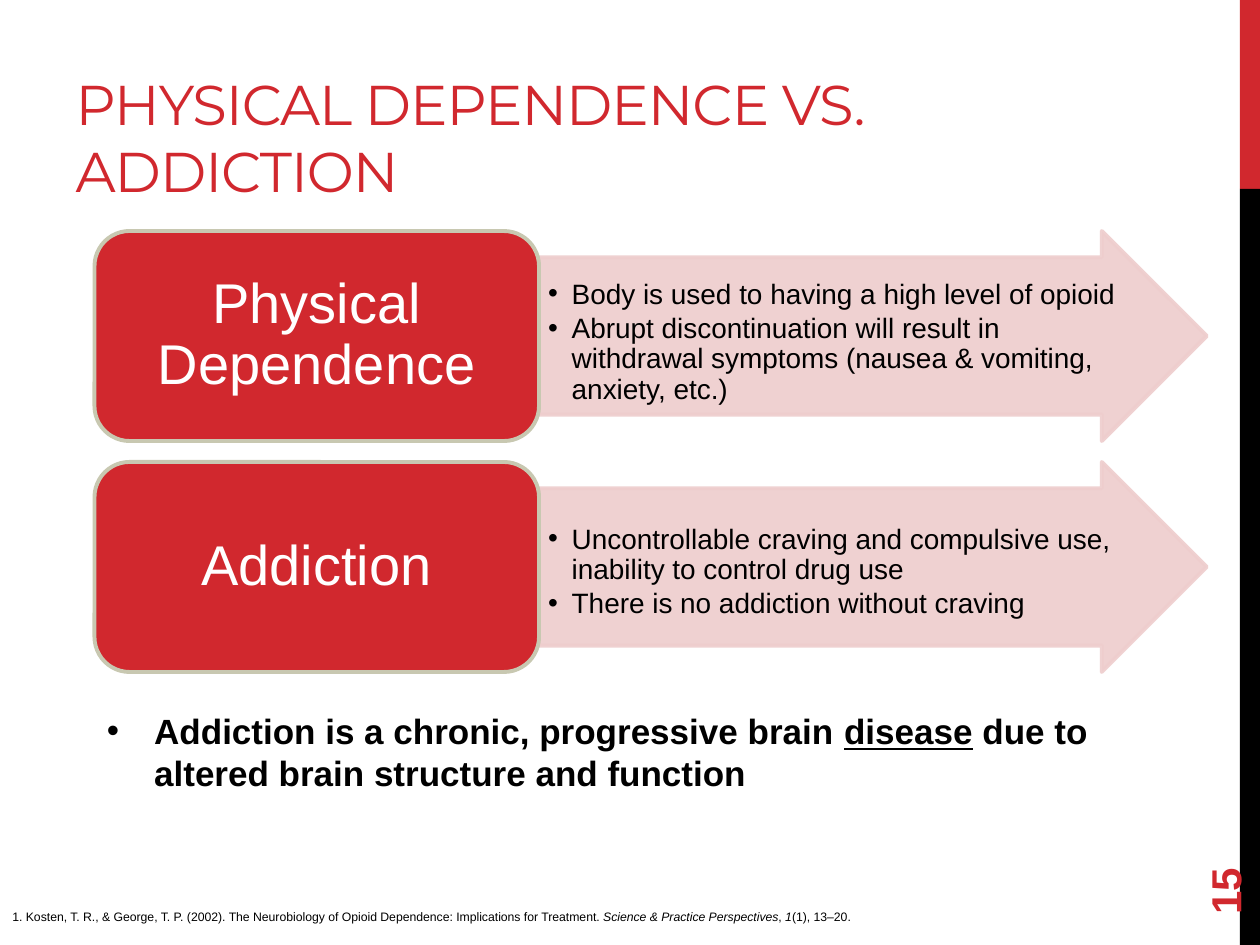
from lxml.etree import SubElement
from pptx import Presentation
from pptx.dml.color import RGBColor
from pptx.enum.shapes import MSO_SHAPE
from pptx.enum.text import MSO_ANCHOR, MSO_AUTO_SIZE, PP_ALIGN
from pptx.oxml.ns import qn
from pptx.util import Pt

COLORS = {
    "red": "D1282E",
    "black": "000000",
    "white": "FFFFFF",
    "pink": "EECDCD",
    "border": "C8C8B1",
}

# Each row: label, space above the bullets, bullets
ROWS = [
    ("Physical Dependence", 13, [
        "Body is used to having a high level of opioid",
        "Abrupt discontinuation will result in withdrawal symptoms "
        "(nausea & vomiting, anxiety, etc.)",
    ]),
    ("Addiction", 21, [
        "Uncontrollable craving and compulsive use, inability to control drug use",
        "There is no addiction without craving",
    ]),
]
ROW_TOP, ROW_PITCH, ROW_HEIGHT = 132, 132, 120
LABEL_LEFT, LABEL_WIDTH, ARROW_WIDTH = 54, 254, 381.6


def color(name):
    return RGBColor.from_string(COLORS[name])


def style_font(font, size, name, bold=False, family="Arial"):
    font.size = Pt(size)
    font.name = family
    font.bold = bold
    font.color.rgb = color(name)


def set_insets(frame, left, top, right, bottom):
    frame.margin_left, frame.margin_top = Pt(left), Pt(top)
    frame.margin_right, frame.margin_bottom = Pt(right), Pt(bottom)


def add_bullet(para, margin, hanging):
    props = para._p.get_or_add_pPr()
    props.set("marL", str(Pt(margin)))
    props.set("indent", str(-Pt(hanging)))
    SubElement(props, qn("a:buFont")).set("typeface", "Arial")
    SubElement(props, qn("a:buChar")).set("char", "•")


def set_opacity(fill, percent):
    choice = fill._xPr.find(qn("a:solidFill"))[0]
    SubElement(choice, qn("a:alpha")).set("val", str(percent * 1000))


def add_block(page, kind, box, fill, line=None):
    shape = page.shapes.add_shape(kind, *map(Pt, box))
    shape.shadow.inherit = False
    shape.fill.solid()
    shape.fill.fore_color.rgb = color(fill)
    if line:
        shape.line.color.rgb = color(line)
        shape.line.width = Pt(2.25)
    else:
        shape.line.fill.background()
    return shape


def add_text(page, box, spans, size, name, bold=False):
    """Add a one-paragraph text box; spans are (text, font attribute or None)."""
    shape = page.shapes.add_textbox(*map(Pt, box))
    shape.text_frame.word_wrap = True
    para = shape.text_frame.paragraphs[0]
    style_font(para.font, size, name, bold)
    for text, emphasis in spans:
        span = para.add_run()
        span.text = text
        style_font(span.font, size, name, bold)
        if emphasis:
            setattr(span.font, emphasis, True)
    return shape


def add_title(page, text):
    title = page.shapes.title
    title.left, title.top, title.width, title.height = map(Pt, (36, 12, 516, 108))
    frame = title.text_frame
    frame.word_wrap = True
    frame.auto_size = MSO_AUTO_SIZE.NONE
    frame.vertical_anchor = MSO_ANCHOR.BOTTOM
    para = frame.paragraphs[0]
    para.alignment = PP_ALIGN.LEFT
    span = para.add_run()
    span.text = text
    style_font(span.font, 32, "red", family="Montserrat")
    span.font._element.set("spc", "-60")


def add_arrow(page, top, space_above, bullets):
    box = (LABEL_LEFT + LABEL_WIDTH, top, ARROW_WIDTH, ROW_HEIGHT)
    arrow = add_block(page, MSO_SHAPE.RIGHT_ARROW, box, "pink", "pink")
    arrow.adjustments[0], arrow.adjustments[1] = 0.75, 0.5
    set_opacity(arrow.fill, 90)
    set_opacity(arrow.line.fill, 90)
    frame = arrow.text_frame
    frame.vertical_anchor = MSO_ANCHOR.TOP
    set_insets(frame, 0.72, space_above, 0.72, 0.72)
    for index, text in enumerate(bullets):
        para = frame.paragraphs[0] if index == 0 else frame.add_paragraph()
        para.text = text
        para.alignment = PP_ALIGN.LEFT
        para.line_spacing = 0.9
        para.space_after = Pt(2.4)
        style_font(para.font, 16, "black")
        add_bullet(para, 18, 13.5)


def add_label(page, top, text):
    box = (LABEL_LEFT, top, LABEL_WIDTH, ROW_HEIGHT)
    label = add_block(page, MSO_SHAPE.ROUNDED_RECTANGLE, box, "red", "border")
    frame = label.text_frame
    frame.vertical_anchor = MSO_ANCHOR.MIDDLE
    set_insets(frame, 9.5, 5, 9.5, 5)
    para = frame.paragraphs[0]
    para.text = text
    para.alignment = PP_ALIGN.CENTER
    para.line_spacing = 0.9
    style_font(para.font, 32, "white")


def main():
    deck = Presentation()
    deck.slide_width, deck.slide_height = Pt(720), Pt(540)
    page = deck.slides.add_slide(deck.slide_layouts[5])

    # Side band and title
    add_block(page, MSO_SHAPE.RECTANGLE, (708.5, 0, 11.5, 108), "red")
    add_block(page, MSO_SHAPE.RECTANGLE, (708.5, 108, 11.5, 432), "black")
    add_title(page, "PHYSICAL DEPENDENCE VS. ADDICTION")

    # Comparison rows
    for index, (label, space_above, bullets) in enumerate(ROWS):
        top = ROW_TOP + index * ROW_PITCH
        add_arrow(page, top, space_above, bullets)
        add_label(page, top, label)

    # Key message
    message = add_text(page, (54, 402, 636, 55.5), [
        ("Addiction is a chronic, progressive brain ", None),
        ("disease", "underline"),
        (" due to altered brain structure and function", None),
    ], 20, "black", bold=True)
    add_bullet(message.text_frame.paragraphs[0], 27, 27)

    # Reference and page number
    add_text(page, (0, 516, 546, 16), [
        ("1. Kosten, T. R., & George, T. P. (2002). The Neurobiology of Opioid "
         "Dependence: Implications for Treatment. ", None),
        ("Science & Practice Perspectives", "italic"),
        (", ", None),
        ("1", "italic"),
        ("(1), 13–20.", None),
    ], 7, "black")
    number = add_text(page, (648, 463.5, 103.5, 29), [("15", None)], 24, "red", bold=True)
    number.rotation = 270
    number.text_frame.vertical_anchor = MSO_ANCHOR.MIDDLE

    deck.save("out.pptx")


if __name__ == "__main__":
    main()
